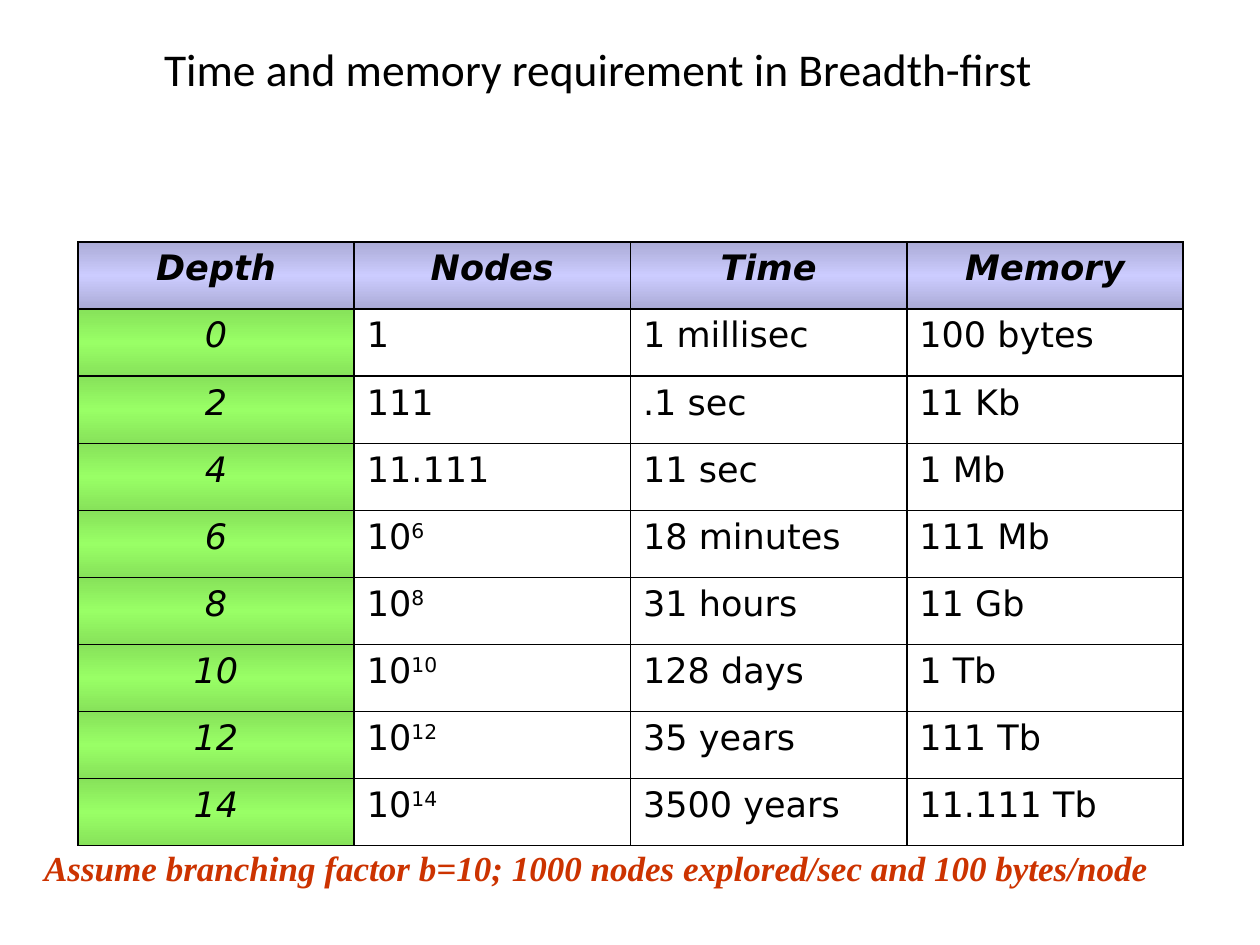
from lxml.etree import SubElement
from pptx import Presentation
from pptx.dml.color import RGBColor
from pptx.enum.text import MSO_ANCHOR as Anchor, MSO_AUTO_SIZE as AutoSize, PP_ALIGN as Align
from pptx.oxml.ns import qn
from pptx.util import Cm, Pt

BLACK = RGBColor(0x00, 0x00, 0x00)
RUST = RGBColor(0xCC, 0x33, 0x00)
LAVENDER = RGBColor(0xCC, 0xCC, 0xFF)
GREEN = RGBColor(0x99, 0xFF, 0x66)

HEADINGS = ["Depth", "Nodes", "Time", "Memory"]
ROWS = [
    ["0", "1", "1 millisec", "100 bytes"],
    ["2", "111", ".1 sec", "11 Kb"],
    ["4", "11.111", "11 sec", "1 Mb"],
    ["6", "10^6", "18 minutes", "111 Mb"],
    ["8", "10^8", "31 hours", "11 Gb"],
    ["10", "10^10", "128 days", "1 Tb"],
    ["12", "10^12", "35 years", "111 Tb"],
    ["14", "10^14", "3500 years", "11.111 Tb"],
]


def write_text(frame, text, font="DejaVu Sans", size=20, color=BLACK, bold=False,
               italic=False, align=Align.LEFT, space_before=0):
    """Write one paragraph, raising whatever follows a caret; space_before is in percent."""
    frame.word_wrap = True
    paragraph = frame.paragraphs[0]
    paragraph.alignment = align
    if space_before:
        spacing = SubElement(paragraph._p.get_or_add_pPr(), qn("a:spcBef"))
        SubElement(spacing, qn("a:spcPct"), val=str(space_before * 1000))
    for index, part in enumerate(text.split("^")):
        run = paragraph.add_run()
        run.text = part
        run.font.name = font
        run.font.size = Pt(size)
        run.font.color.rgb = color
        run.font.bold = bold
        run.font.italic = italic
        if index:
            run.font._element.set("baseline", "30000")


def add_borders(cell, color=BLACK, width=1):
    """Draw a solid line on all four sides of a cell."""
    properties = cell._tc.get_or_add_tcPr()
    for side in ("a:lnL", "a:lnR", "a:lnT", "a:lnB"):
        line = SubElement(properties, qn(side), w=str(Pt(width)))
        fill = SubElement(line, qn("a:solidFill"))
        SubElement(fill, qn("a:srgbClr"), val=str(color))


def add_gradient(cell, color, shade):
    """Fill a cell from shaded edges to a bright middle, top to bottom."""
    gradient = SubElement(cell._tc.get_or_add_tcPr(), qn("a:gradFill"), rotWithShape="1")
    stops = SubElement(gradient, qn("a:gsLst"))
    for position in (0, 50, 100):
        stop = SubElement(stops, qn("a:gs"), pos=str(position * 1000))
        stop_color = SubElement(stop, qn("a:srgbClr"), val=str(color))
        if position != 50:
            SubElement(stop_color, qn("a:shade"), val=str(shade * 1000))
    SubElement(gradient, qn("a:lin"), ang="5400000", scaled="1")


def add_title(slide, left, top, width, height):
    """Place the centred heading."""
    frame = slide.shapes.add_textbox(left, top, width, height).text_frame
    frame.vertical_anchor = Anchor.MIDDLE
    write_text(frame, "Time and memory requirement in Breadth-first",
               font="Calibri", size=26, align=Align.CENTER)


def add_requirements(slide, left, top, width, height):
    """Place the table of time and memory by depth."""
    grid = [HEADINGS] + ROWS
    table = slide.shapes.add_table(len(grid), len(HEADINGS), left, top, width, height).table
    table.first_row = False
    table.horz_banding = False
    for row_index, row in enumerate(grid):
        for column_index, text in enumerate(row):
            cell = table.cell(row_index, column_index)
            heading = row_index == 0
            label = heading or column_index == 0
            write_text(cell.text_frame, text, bold=heading, italic=label, space_before=20,
                       align=Align.CENTER if label else Align.LEFT)
            add_borders(cell)
            if heading:
                add_gradient(cell, LAVENDER, 67)
            elif label:
                add_gradient(cell, GREEN, 76)
            else:
                cell.fill.background()


def add_assumption(slide, left, top, width, height):
    """Place the note under the table."""
    frame = slide.shapes.add_textbox(left, top, width, height).text_frame
    frame.auto_size = AutoSize.SHAPE_TO_FIT_TEXT
    write_text(frame, "Assume branching factor b=10; 1000 nodes explored/sec and 100 bytes/node",
               font="Times New Roman", color=RUST, bold=True, italic=True, space_before=50)


def main():
    """Build the slide and save it."""
    presentation = Presentation()
    presentation.slide_width = Cm(25.4)
    presentation.slide_height = Cm(19.05)
    slide = presentation.slides.add_slide(presentation.slide_layouts[6])
    add_title(slide, Cm(1.27), Cm(0.43), Cm(21.59), Cm(1.9))
    add_requirements(slide, Cm(1.57), Cm(4.88), Cm(22.28), Cm(12.17))
    add_assumption(slide, Cm(0.64), Cm(16.94), Cm(23.5), Cm(1.09))
    presentation.save("out.pptx")


if __name__ == "__main__":
    main()
